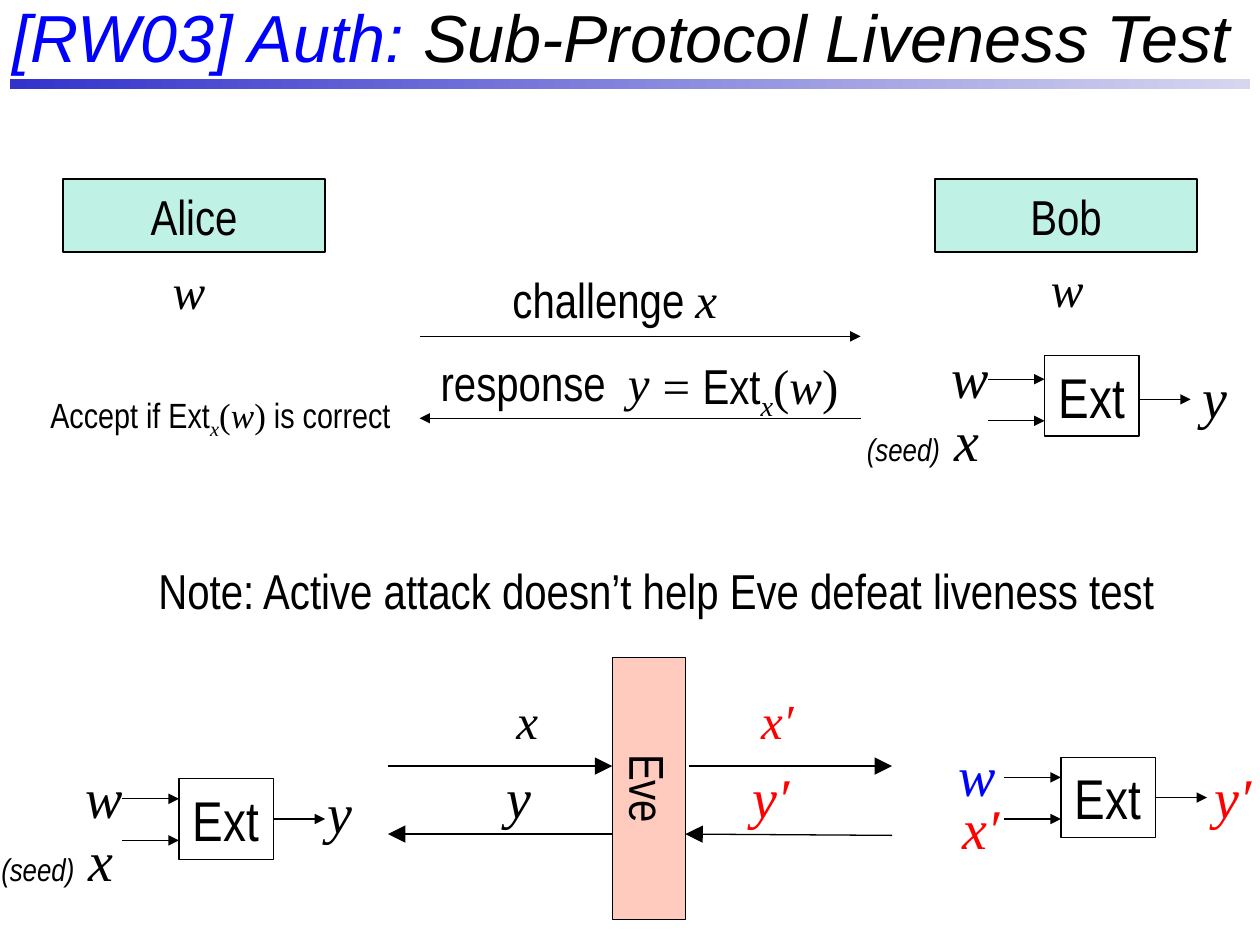
from lxml import etree
from pptx import Presentation
from pptx.dml.color import RGBColor
from pptx.enum.shapes import MSO_CONNECTOR, MSO_SHAPE
from pptx.enum.text import MSO_ANCHOR, PP_ALIGN
from pptx.oxml.ns import qn
from pptx.util import Cm, Pt

COLORS = {"black": "000000", "blue": "0000FF", "red": "FF0000",
          "green": "00CC99", "orange": "FF3300",
          "bar_start": "3333CC", "bar_end": "D6D6EF"}
SANS, NARROW, SERIF = "Arial", "Arial Narrow", "Times New Roman"


def inch(v):
    return Cm(v * 2.54)


def rgb(name):
    return RGBColor.from_string(COLORS[name])


def run(text, size=28, font=NARROW, color="black", italic=False, base=0):
    """Describe one run of text with its format."""
    return dict(text=text, size=size, font=font, color=color,
                italic=italic, base=base)


def var(text, size=28, **fmt):
    """A variable: italic serif."""
    return run(text, size, SERIF, italic=True, **fmt)


def ext_of_w(size, end):
    """Runs for Ext_x(w) after the word Ext."""
    return [var("x", size, base=-25000), run("(", size, SERIF),
            var("w", size), run(end, size, SERIF)]


class Board:
    """Slide plus the style shared by its elements."""
    line_width = Pt(0.75)
    space_before = Pt(4)

    def __init__(self, slide):
        self.s = slide

    def fill_text(self, tf, runs, align, before):
        p = tf.paragraphs[0]
        p.alignment = align
        p.space_before = before
        for item in runs:
            r = p.add_run()
            r.text = item["text"]
            f = r.font
            f.size, f.name, f.italic = Pt(item["size"]), item["font"], item["italic"]
            f.color.rgb = rgb(item["color"])
            if item["base"]:
                f._element.set("baseline", str(item["base"]))

    def text(self, x, y, w, h, *runs, align=PP_ALIGN.CENTER):
        sp = self.s.shapes.add_textbox(*map(inch, (x, y, w, h)))
        sp.text_frame.word_wrap = True
        self.fill_text(sp.text_frame, runs, align, self.space_before)

    def box(self, x, y, w, h, label, fill=None, rotation=0):
        sp = self.s.shapes.add_shape(MSO_SHAPE.RECTANGLE, *map(inch, (x, y, w, h)))
        sp.shadow.inherit = False
        sp.rotation = rotation
        sp.line.color.rgb = rgb("black")
        sp.line.width = self.line_width
        if fill:
            sp.fill.solid()
            sp.fill.fore_color.rgb = rgb(fill)
            color = sp._element.spPr.find(".//" + qn("a:srgbClr"))
            etree.SubElement(color, qn("a:alpha"), val="25000")
        else:
            sp.fill.background()
        tf = sp.text_frame
        tf.word_wrap = False
        tf.vertical_anchor = MSO_ANCHOR.MIDDLE
        before = Pt(0) if rotation else self.space_before
        self.fill_text(tf, [label], PP_ALIGN.CENTER, before)
        return sp

    def bar(self, x, y, w, h):
        sp = self.s.shapes.add_shape(MSO_SHAPE.RECTANGLE, *map(inch, (x, y, w, h)))
        sp.shadow.inherit = False
        sp.line.fill.background()
        sp.fill.gradient()
        sp.fill.gradient_angle = 0
        for stop, name, pos in zip(sp.fill.gradient_stops, ("bar_start", "bar_end"), (0, 1)):
            stop.color.rgb = rgb(name)
            stop.position = pos

    def arrow(self, x1, y1, x2, y2, head="med", start=None):
        c = self.s.shapes.add_connector(MSO_CONNECTOR.STRAIGHT,
                                        *map(inch, (x1, y1, x2, y2)))
        if start is not None:
            c.begin_connect(start, 3)
        c.line.color.rgb = rgb("black")
        c.line.width = self.line_width
        etree.SubElement(c.line._get_or_add_ln(), qn("a:tailEnd"),
                         type="triangle", w=head, len=head)
        etree.SubElement(c._element.spPr, qn("a:effectLst"))

    def extractor(self, x, y, labels, drop=0):
        """Ext box with two inputs and one output; labels are relative to it."""
        sp = self.box(x, y, 0.75, 0.64, run("Ext", 32))
        mid = y + 0.32 + drop
        for dy in (-0.16, 0.17):
            self.arrow(x - 0.45, mid + dy, x, mid + dy)
        self.arrow(x + 0.75, mid, x + 1.16, mid, start=None if drop else sp)
        for dx, dy, w, runs in labels:
            self.text(x + dx, y + dy, w, 0.5, *runs)


def main():
    prs = Presentation()
    prs.slide_width, prs.slide_height = inch(10), inch(7.5)
    b = Board(prs.slides.add_slide(prs.slide_layouts[6]))

    # Title
    b.bar(0.08, 0.63, 9.84, 0.08)
    b.text(0, -0.08, 10, 0.73,
           run("[RW03] Auth: ", 38, SANS, "blue", True),
           run("Sub-Protocol Liveness Test", 38, SANS, italic=True),
           align=PP_ALIGN.LEFT)

    # Parties and their shared secret
    for name, x, wx, wy in (("Alice", 0.5, 1.27, 2.02), ("Bob", 7.42, 8.24, 2)):
        b.box(x, 1.42, 2.08, 0.58, run(name), "green")
        b.text(wx, wy, 0.46, 0.57, var("w"))

    # Challenge and response
    b.arrow(3.33, 2.67, 6.83, 2.67)
    b.arrow(6.83, 3.32, 3.33, 3.32)
    b.text(3.78, 2.09, 2.2, 0.57, run("challenge "), var("x"))
    b.text(3.25, 2.75, 2.25, 0.57, run("response  "), var("y "))
    b.text(4.92, 2.77, 2.17, 0.57, run("= ", font=SERIF), run("Ext"),
           *ext_of_w(28, ") "))
    b.text(0.25, 3.07, 3, 0.43, run("Accept if Ext", 20),
           *ext_of_w(20, ")"), run(" is correct", 20))

    # Extractors: Bob above, then Alice and Bob under attack
    seed = [run("(seed)", 18, italic=True), var(" x", 32)]
    w, y = [var("w", 32)], [var("y", 32)]
    b.extractor(8.29, 2.82, [(-1.59, 0.35, 1.25, seed), (-0.84, -0.15, 0.5, w),
                             (1.13, 0.01, 0.45, y)], drop=0.03)
    b.extractor(1.42, 6.18, [(-1.59, 0.32, 1.25, seed), (-0.84, -0.18, 0.5, w),
                             (1.08, -0.06, 0.33, y)])
    b.extractor(8.42, 6.01, [(-1, -0.18, 0.67, [var("w", 32, color="blue")]),
                             (-0.92, 0.24, 0.58, [var("x′", 32, color="red")]),
                             (1.08, -0.01, 0.58, [var("y′", 32, color="red")])])

    # Active attack by Eve
    b.text(0.33, 4.4, 9.75, 0.57,
           run("Note: Active attack doesn’t help Eve defeat liveness test"))
    for ends in ((3.08, 6.08, 4.86, 6.08), (5.47, 6.08, 7.08, 6.08),
                 (4.86, 6.62, 3.08, 6.62), (7.08, 6.63, 5.44, 6.62)):
        b.arrow(*ends, head="lg")
    b.text(4, 5.43, 0.33, 0.57, var("x"))
    b.text(5.92, 5.43, 0.5, 0.57, var("x′", color="red"))
    b.text(3.83, 6, 0.58, 0.5, *y)
    b.text(5.83, 6, 0.58, 0.5, var("y′", 32, color="red"))
    b.box(4.11, 5.97, 2.08, 0.58, run("Eve"), "orange", rotation=90)

    prs.save("out.pptx")


if __name__ == "__main__":
    main()
